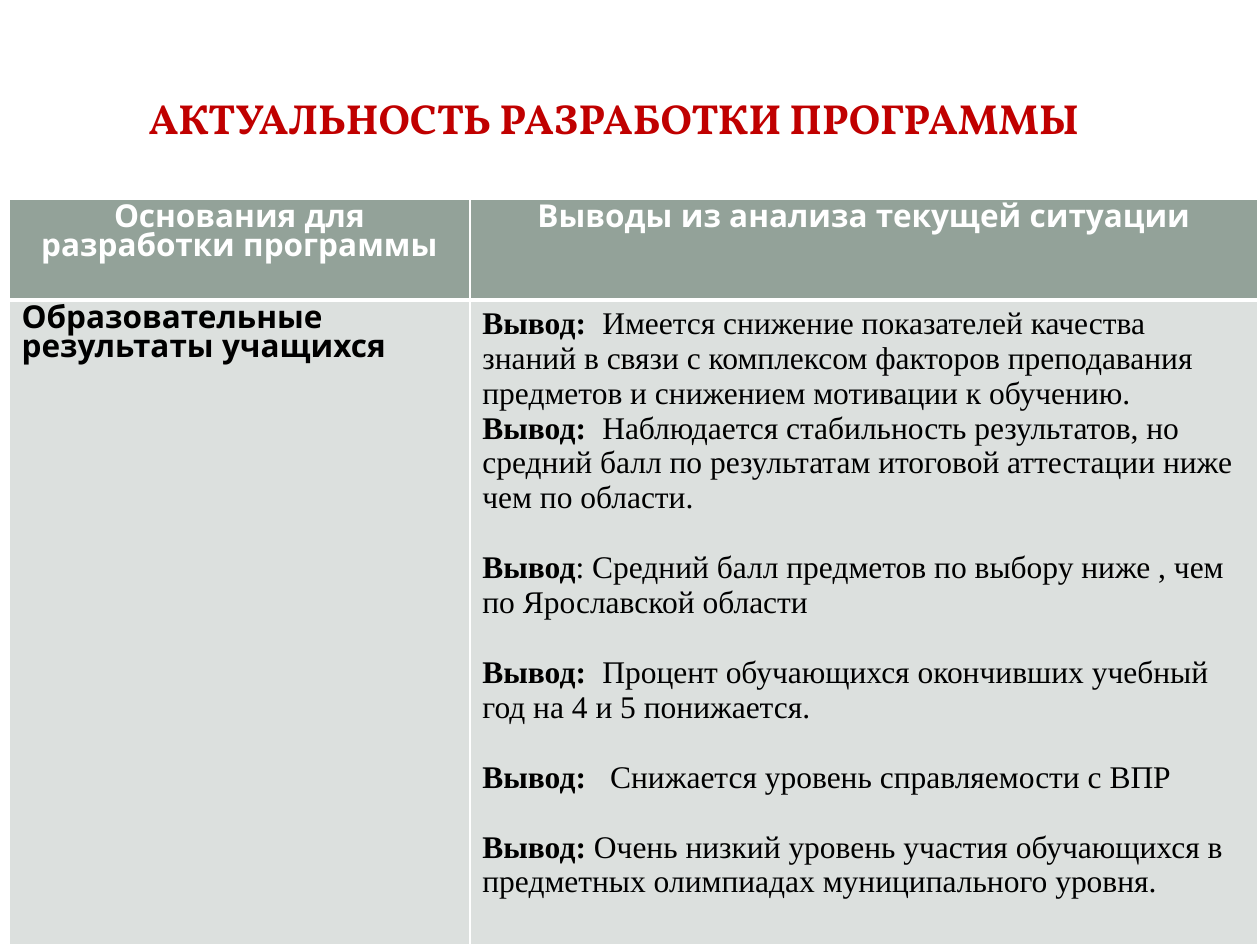
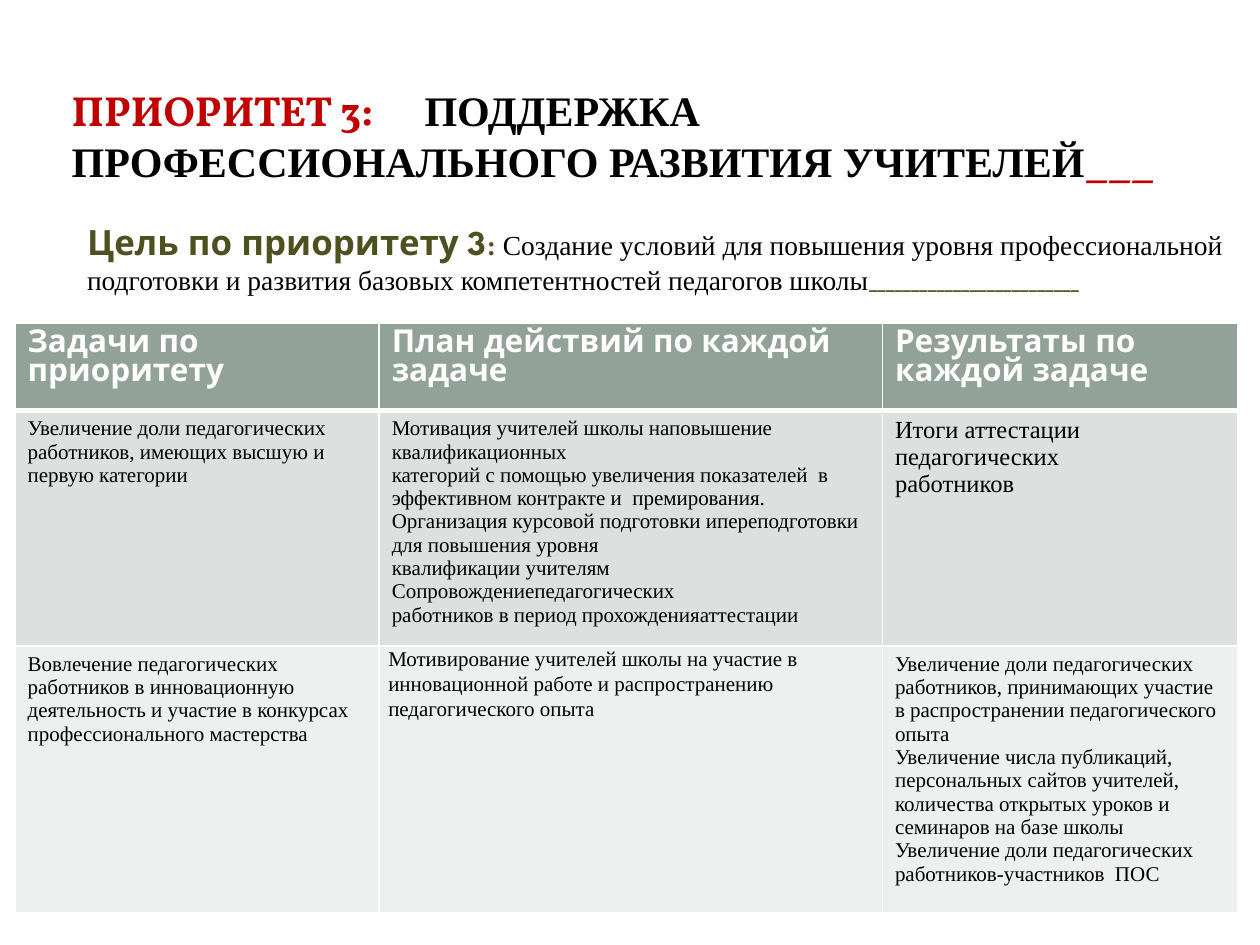
from dataclasses import dataclass, replace
from typing import NamedTuple, Optional

from lxml import etree
from pptx import Presentation
from pptx.dml.color import RGBColor
from pptx.enum.shapes import MSO_SHAPE
from pptx.enum.text import MSO_ANCHOR, MSO_AUTO_SIZE, PP_ALIGN
from pptx.oxml.ns import qn
from pptx.util import Pt

WHITE = RGBColor(0xFF, 0xFF, 0xFF)
BLACK = RGBColor(0x00, 0x00, 0x00)
RED = RGBColor(0xC0, 0x00, 0x00)
OLIVE = RGBColor(0x4E, 0x50, 0x1F)
SAGE = RGBColor(0x93, 0xA2, 0x99)
BAND_DARK = RGBColor(0xDC, 0xE0, 0xDE)
BAND_LIGHT = RGBColor(0xEE, 0xF0, 0xEF)
ROW_FILLS = (SAGE, BAND_DARK, BAND_LIGHT)

SANS = "League Spartan"
SERIF = "Times New Roman"
DISPLAY = "Vollkorn"


class Box(NamedTuple):
    left: float
    top: float
    width: float
    height: float


class Panel(NamedTuple):
    kind: MSO_SHAPE
    box: Box
    alpha: int = 100


@dataclass(frozen=True)
class Style:
    name: str
    size: float
    color: RGBColor = BLACK
    bold: bool = False


class Span(NamedTuple):
    text: str
    style: Style


@dataclass(frozen=True)
class Para:
    spans: tuple[Span, ...]
    align: PP_ALIGN = PP_ALIGN.LEFT
    before: float = 0
    tab: Optional[float] = None
    spacing: Optional[float] = None


@dataclass(frozen=True)
class Cell:
    paras: tuple[Para, ...]
    margin_x: float = 7.2
    margin_y: float = 3.6


@dataclass(frozen=True)
class Grid:
    left: float
    top: float
    cols: tuple[float, ...]
    rows: tuple[float, ...]
    cells: tuple[tuple[Cell, ...], ...]


PANELS = (
    Panel(MSO_SHAPE.ROUNDED_RECTANGLE, Box(7.2, 7.9, 705.6, 524.9)),
    Panel(MSO_SHAPE.RECTANGLE, Box(21.6, 21.6, 676.8, 104.4), 83),
    Panel(MSO_SHAPE.RECTANGLE, Box(29.5, 29.5, 660.2, 87.8)),
)

TITLE = Style(DISPLAY, 24, RED, True)
HEADER = Style(SANS, 18, WHITE, True)
ROW_LABEL = replace(HEADER, color=BLACK)
FINDING = Style(SERIF, 18)
FINDING_LABEL = replace(FINDING, bold=True)
TASK = Style(SERIF, 12)
RESULT = Style(SERIF, 14)
GOAL_LABEL = Style(SANS, 19.9, OLIVE, True)
GOAL_COLON = Style(SERIF, 15.7, OLIVE, True)
GOAL = Style(SERIF, 15.7)
GOAL_RULE = Style(SANS, 11.4, OLIVE, True)


def set_font(font, style: Style) -> None:
    font.name = style.name
    font.size = Pt(style.size)
    font.bold = style.bold
    font.color.rgb = style.color


def set_tab(p, pos: float) -> None:
    tabs = etree.SubElement(p._p.get_or_add_pPr(), qn("a:tabLst"))
    etree.SubElement(tabs, qn("a:tab"), pos=str(int(Pt(pos))), algn="l")


def write(tf, paras: tuple[Para, ...]) -> None:
    tf.word_wrap = True
    for i, para in enumerate(paras):
        p = tf.add_paragraph() if i else tf.paragraphs[0]
        p.alignment = para.align
        p.space_before = Pt(para.before)
        if para.spacing:
            p.line_spacing = para.spacing
        if para.tab:
            set_tab(p, para.tab)
        if len(para.spans) == 1:
            p.text = para.spans[0].text
            set_font(p.font, para.spans[0].style)
            continue
        for span in para.spans:
            r = p.add_run()
            r.text = span.text
            set_font(r.font, span.style)


def add_panels(slide) -> None:
    for panel in PANELS:
        sp = slide.shapes.add_shape(panel.kind, *map(Pt, panel.box))
        sp.shadow.inherit = False
        sp.fill.solid()
        sp.fill.fore_color.rgb = WHITE
        sp.line.fill.background()
        if panel.kind == MSO_SHAPE.ROUNDED_RECTANGLE:
            sp.adjustments[0] = 0.017
        if panel.alpha < 100:
            color = sp.element.spPr.find(qn("a:solidFill")).find(qn("a:srgbClr"))
            etree.SubElement(color, qn("a:alpha"), val=str(panel.alpha * 1000))
    slide.shapes.element.append(slide.shapes.title.element)


def set_borders(cell, top: float, bottom: float) -> None:
    tc_pr = cell._tc.get_or_add_tcPr()
    for side, width in (("L", 1), ("R", 1), ("T", top), ("B", bottom)):
        ln = etree.SubElement(tc_pr, qn(f"a:ln{side}"), w=str(int(Pt(width))))
        fill = etree.SubElement(ln, qn("a:solidFill"))
        etree.SubElement(fill, qn("a:srgbClr"), val=str(WHITE))


def add_grid(slide, grid: Grid) -> None:
    table = slide.shapes.add_table(
        len(grid.rows), len(grid.cols), Pt(grid.left), Pt(grid.top),
        Pt(sum(grid.cols)), Pt(sum(grid.rows))).table
    table.horz_banding = False
    for col, width in zip(table.columns, grid.cols):
        col.width = Pt(width)
    for i, (row, height) in enumerate(zip(table.rows, grid.rows)):
        row.height = Pt(height)
        for cell, content in zip(row.cells, grid.cells[i]):
            set_borders(cell, 3 if i == 1 else 1, 3 if i == 0 else 1)
            cell.fill.solid()
            cell.fill.fore_color.rgb = ROW_FILLS[i]
            cell.margin_left = cell.margin_right = Pt(content.margin_x)
            cell.margin_top = cell.margin_bottom = Pt(content.margin_y)
            write(cell.text_frame, content.paras)


def add_titled_slide(prs, box: Box, para: Para):
    slide = prs.slides.add_slide(prs.slide_layouts[5])
    add_panels(slide)
    title = slide.shapes.title
    title.left, title.top, title.width, title.height = map(Pt, box)
    tf = title.text_frame
    tf.auto_size = MSO_AUTO_SIZE.NONE
    tf.vertical_anchor = MSO_ANCHOR.MIDDLE
    write(tf, (para,))
    return slide


def add_goal(slide, box: Box, para: Para) -> None:
    tf = slide.shapes.add_textbox(*map(Pt, box)).text_frame
    tf.margin_left = Pt(15.8)
    write(tf, (para,))


def text_cell(text: str, style: Style, align: PP_ALIGN = PP_ALIGN.LEFT) -> Cell:
    return Cell((Para((Span(text, style),), align),))


def finding(label: str, text: str, before: float = 0,
            tab: Optional[float] = None) -> Para:
    return Para((Span(label, FINDING_LABEL), Span(text, FINDING)),
                before=before, tab=tab)


FINDINGS = Cell((
    finding("Вывод:", "\tИмеется снижение показателей качества знаний в связи с "
            "комплексом факторов преподавания предметов и снижением мотивации "
            "к обучению.", tab=68.5),
    finding("Вывод:", "\tНаблюдается стабильность результатов, но средний балл "
            "по результатам итоговой аттестации ниже чем по области.", tab=68.5),
    finding("Вывод", ": Средний балл предметов по выбору ниже , чем по "
            "Ярославской области", 20),
    finding("Вывод:", "\tПроцент обучающихся окончивших учебный год на 4 и 5 "
            "понижается.", 20, 68.5),
    finding("Вывод:", "\tСнижается уровень справляемости с ВПР", 20, 73),
    finding("Вывод: ", "Очень низкий уровень участия обучающихся в предметных "
            "олимпиадах муниципального уровня.", 20),
))

RELEVANCE = Grid(5.2, 113.8, (263.3, 450.4), (57.6, 368.4), (
    (text_cell("Основания для разработки программы", HEADER, PP_ALIGN.CENTER),
     text_cell("Выводы из анализа текущей ситуации", HEADER, PP_ALIGN.CENTER)),
    (text_cell("Образовательные результаты учащихся", ROW_LABEL), FINDINGS),
))

MOTIVATION = Cell((Para((Span(
    "Мотивирование учителей школы на участие в инновационной работе и "
    "распространению педагогического опыта", TASK),), spacing=1.07),), 5.2, 0)

PRIORITY = Grid(8.6, 185, (208.1, 287.6, 203.2), (49.7, 134.6, 152.4), (
    tuple(text_cell(text, HEADER) for text in (
        "Задачи по приоритету",
        "План действий по каждой задаче",
        "Результаты по каждой задаче")),
    (text_cell("Увеличение доли педагогических\nработников, имеющих высшую и\n"
               "первую категории", TASK),
     text_cell("Мотивация учителей школы наповышение квалификационных\n"
               "категорий с помощью увеличения показателей  в эффективном "
               "контракте и  премирования.\n"
               "Организация курсовой подготовки ипереподготовки для повышения "
               "уровня\nквалификации учителям\nСопровождениепедагогических\n"
               "работников в период прохожденияаттестации", TASK),
     text_cell("Итоги аттестации педагогических\nработников", RESULT)),
    (text_cell("Вовлечение педагогических работников в инновационную "
               "деятельность и участие в конкурсах профессионального "
               "мастерства", TASK),
     MOTIVATION,
     text_cell("Увеличение доли педагогических\nработников, принимающих участие "
               "в распространении педагогического\nопыта\n"
               "Увеличение числа публикаций,\nперсональных сайтов учителей,\n"
               "количества открытых уроков и\nсеминаров на базе школы\n"
               "Увеличение доли педагогических\nработников-участников  ПОС",
               TASK)),
))

PRIORITY_TITLE = Para((
    Span("ПРИОРИТЕТ 3:\t", TITLE),
    Span("ПОДДЕРЖКА ПРОФЕССИОНАЛЬНОГО РАЗВИТИЯ УЧИТЕЛЕЙ",
         replace(TITLE, name=SERIF, color=BLACK)),
    Span("___", TITLE),
), tab=201.6)

PRIORITY_GOAL = Para((
    Span("Цель по приоритету 3", GOAL_LABEL),
    Span(": ", GOAL_COLON),
    Span("Создание условий для повышения уровня профессиональной подготовки и "
         "развития базовых компетентностей педагогов школы", GOAL),
    Span("_" * 25, GOAL_RULE),
), before=4)


def main() -> None:
    prs = Presentation()
    prs.slide_width, prs.slide_height = Pt(720), Pt(540)

    relevance = add_titled_slide(
        prs, Box(25.5, 26.3, 650.2, 82.1),
        Para((Span("АКТУАЛЬНОСТЬ РАЗРАБОТКИ ПРОГРАММЫ", TITLE),), PP_ALIGN.CENTER))
    add_grid(relevance, RELEVANCE)

    priority = add_titled_slide(prs, Box(33.8, 32, 650.2, 90.7), PRIORITY_TITLE)
    add_grid(priority, PRIORITY)
    add_goal(priority, Box(34, 122.7, 673.9, 62.6), PRIORITY_GOAL)

    prs.save("out.pptx")


if __name__ == "__main__":
    main()
